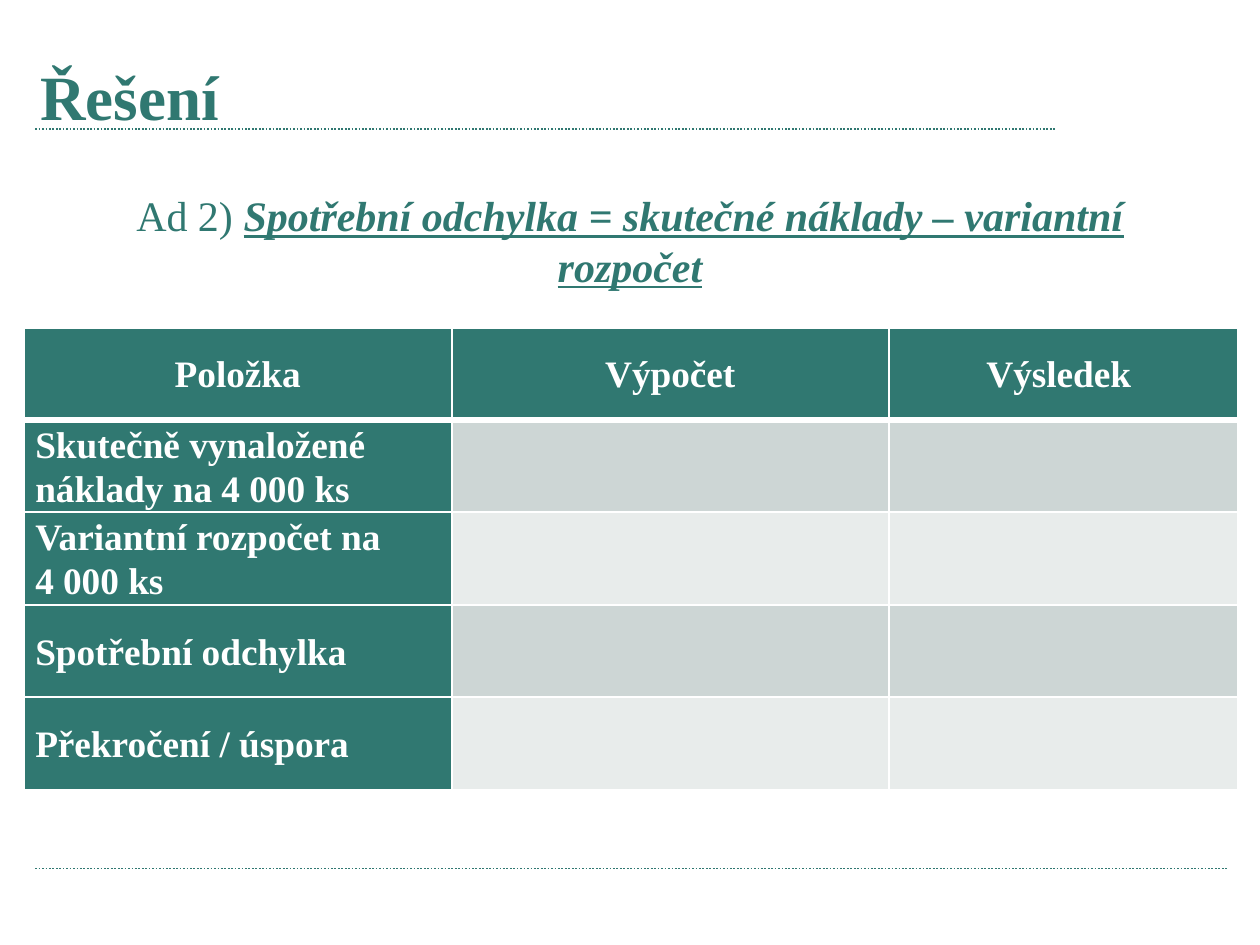
from lxml import etree
from pptx import Presentation
from pptx.dml.color import RGBColor
from pptx.enum.dml import MSO_LINE
from pptx.enum.shapes import MSO_CONNECTOR
from pptx.enum.text import MSO_ANCHOR, PP_ALIGN
from pptx.oxml.ns import qn
from pptx.util import Inches, Pt

STRAIGHT = MSO_CONNECTOR.STRAIGHT
DOTS = MSO_LINE.ROUND_DOT
MIDDLE = MSO_ANCHOR.MIDDLE
LEFT, CENTER = PP_ALIGN.LEFT, PP_ALIGN.CENTER


def rgb(code):
    return RGBColor.from_string(code)


class Deck:
    font = "Times New Roman"
    teal, white = "307871", "FFFFFF"
    bands = ("CDD6D5", "E8ECEB")

    def __init__(self, wide, high):
        self.prs = Presentation()
        self.prs.slide_width, self.prs.slide_height = Inches(wide), Inches(high)
        self.slide = self.prs.slides.add_slide(self.prs.slide_layouts[5])

    def style(self, run, size, color, bold=False, accent=False):
        font = run.font
        font.name, font.size, font.bold = self.font, Pt(size), bold
        font.color.rgb = rgb(color)
        if accent:
            font.italic = font.underline = True

    def rule(self, left, right, y):
        line = self.slide.shapes.add_connector(
            STRAIGHT, Inches(left), Inches(y), Inches(right), Inches(y))
        line.line.color.rgb = rgb(self.teal)
        line.line.width = Pt(0.75)
        line.line.dash_style = DOTS
        etree.SubElement(line._element.spPr, qn("a:effectLst"))

    def title(self, text, left, top, width, height):
        box = self.slide.shapes.title
        box.left, box.top = Inches(left), Inches(top)
        box.width, box.height = Inches(width), Inches(height)
        frame = box.text_frame
        frame.text = text
        frame.vertical_anchor = MIDDLE
        frame.margin_bottom = Inches(0.09)
        para = frame.paragraphs[0]
        para.alignment = LEFT
        self.style(para.runs[0], 27, self.teal, bold=True)

    def note(self, lead, main, left, top, width, height):
        box = self.slide.shapes.add_textbox(
            Inches(left), Inches(top), Inches(width), Inches(height))
        frame = box.text_frame
        frame.word_wrap = True
        para = frame.paragraphs[0]
        para.alignment = CENTER
        for text, strong in ((lead, False), (main, True)):
            run = para.add_run()
            run.text = text
            self.style(run, 18, self.teal, strong, strong)

    def edges(self, cell, widths):
        props = cell._tc.get_or_add_tcPr()
        for side, width in zip("LRTB", widths):
            edge = etree.SubElement(props, qn(f"a:ln{side}"), w=str(Pt(width)))
            fill = etree.SubElement(edge, qn("a:solidFill"))
            etree.SubElement(fill, qn("a:srgbClr"), val=self.white)

    def cell(self, cell, text, color, align, widths):
        self.edges(cell, widths)
        cell.fill.solid()
        cell.fill.fore_color.rgb = rgb(color)
        cell.vertical_anchor = MIDDLE
        cell.margin_left = cell.margin_right = Inches(0.07)
        cell.margin_top = cell.margin_bottom = 0
        cell.text_frame.text = text
        for para in cell.text_frame.paragraphs:
            para.alignment = align
            para.line_spacing = 1.07
            for run in para.runs:
                self.style(run, 16, self.white, bold=True)

    def table(self, heads, items, left, top, cols, step):
        count = len(items) + 1
        table = self.slide.shapes.add_table(
            count, len(cols), Inches(left), Inches(top),
            Inches(sum(cols)), Inches(step * count)).table
        for col, width in zip(table.columns, cols):
            col.width = Inches(width)
        for row in table.rows:
            row.height = Inches(step)
        # Header row
        for c, head in enumerate(heads):
            self.cell(table.cell(0, c), head, self.teal, CENTER, (1, 1, 1, 3))
        # Named rows with banded blank cells
        for r, item in enumerate(items, 1):
            widths = (1, 1, 3 if r == 1 else 1, 1)
            for c in range(len(cols)):
                color = self.bands[(r - 1) % 2] if c else self.teal
                self.cell(table.cell(r, c), "" if c else item, color, LEFT, widths)


def main():
    # Slide in the 4:3 format
    deck = Deck(7.5, 7.5 * 3 / 4)

    # Dotted rules and title
    deck.rule(0.21, 6.29, 0.77)
    deck.rule(0.21, 7.31, 5.17)
    deck.title("Řešení", 0.14, 0.29, 6.61, 0.59)

    # Variance table
    deck.table(
        ("Položka", "Výpočet", "Výsledek "),
        ("Skutečně vynaložené náklady na 4 000 ks",
         "Variantní rozpočet na\n4 000 ks",
         "Spotřební odchylka",
         "Překročení / úspora"),
        0.14, 1.95, (2.55, 2.6, 2.08), 0.55)

    # Formula
    deck.note("Ad 2) ", "Spotřební odchylka = skutečné náklady – variantní rozpočet",
              0.44, 1.08, 6.62, 0.71)

    deck.prs.save("out.pptx")


if __name__ == "__main__":
    main()
